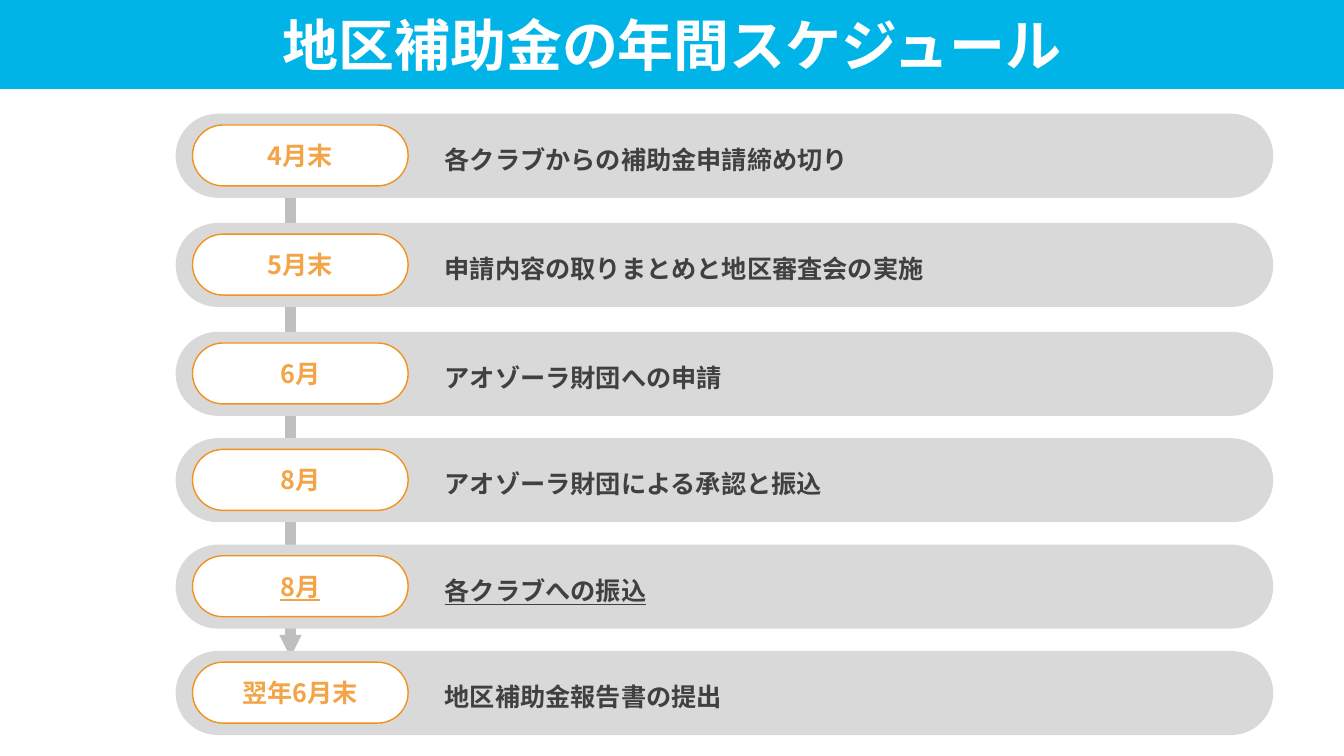
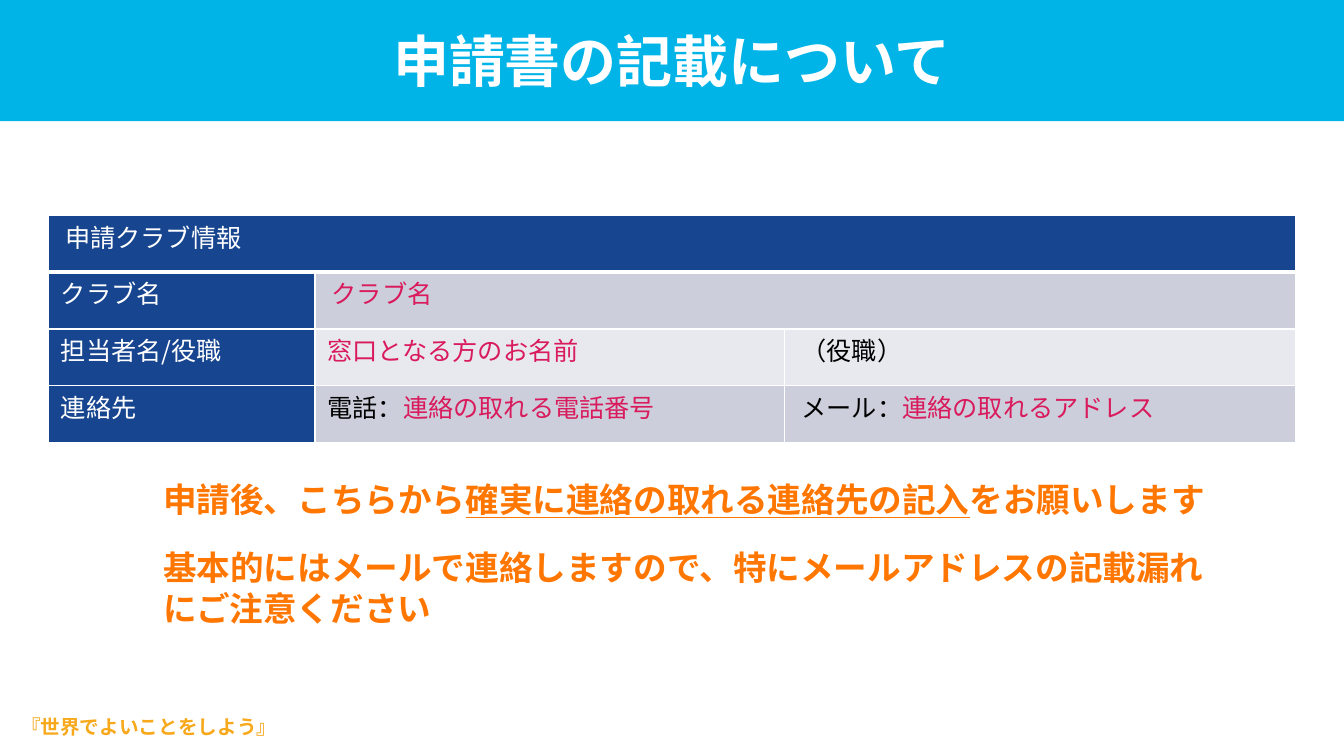
from dataclasses import dataclass

from lxml.etree import SubElement
from pptx import Presentation
from pptx.dml.color import RGBColor as RGB
from pptx.enum.shapes import MSO_CONNECTOR as LINE, MSO_SHAPE as SHAPE
from pptx.enum.text import MSO_ANCHOR as ANCHOR, MSO_AUTO_SIZE as FIT, PP_ALIGN as ALIGN
from pptx.oxml.ns import qn
from pptx.util import Pt


@dataclass(frozen=True)
class Theme:
    font: str = "Noto Sans CJK JP"
    white: RGB = RGB(0xFF, 0xFF, 0xFF)
    black: RGB = RGB(0, 0, 0)
    band: RGB = RGB(0x01, 0xB4, 0xE7)
    bar: RGB = RGB(0xD9, 0xD9, 0xD9)
    arrow: RGB = RGB(0xBF, 0xBF, 0xBF)
    pill_line: RGB = RGB(0xF1, 0x92, 0x1F)
    pill_text: RGB = RGB(0xF3, 0xA4, 0x47)
    body: RGB = RGB(0x40, 0x40, 0x40)
    notice: RGB = RGB(0xFF, 0x76, 0x00)
    motto: RGB = RGB(0xF7, 0xA8, 0x1B)
    navy: RGB = RGB(0x17, 0x45, 0x8F)
    hint: RGB = RGB(0xD9, 0x1A, 0x5C)
    row_dark: RGB = RGB(0xCC, 0xCF, 0xDB)
    row_light: RGB = RGB(0xE8, 0xE9, 0xEE)
    title_size: int = 40
    notice_size: int = 24
    body_size: int = 18
    motto_size: int = 14


theme = Theme()
deck = Presentation()
deck.slide_width, deck.slide_height = Pt(960), Pt(540)


def format_span(span, size, color, bold=True, underline=None):
    font = span.font
    font.size, font.bold, font.underline = Pt(size), bold, underline
    font.color.rgb = color
    font.name = theme.font
    SubElement(font._element, qn("a:ea"), typeface=theme.font)


def add_page(title, band_height):
    page = deck.slides.add_slide(deck.slide_layouts[5])
    band = page.shapes.title
    band.left, band.top, band.width, band.height = Pt(0), Pt(0), deck.slide_width, Pt(band_height)
    band.fill.solid()
    band.fill.fore_color.rgb = theme.band
    frame = band.text_frame
    frame.text = title
    frame.auto_size, frame.vertical_anchor = FIT.NONE, ANCHOR.MIDDLE
    frame.paragraphs[0].alignment = ALIGN.CENTER
    format_span(frame.paragraphs[0].runs[0], theme.title_size, theme.white)
    return page


# Slide 1: yearly schedule
page = add_page("地区補助金の年間スケジュール", 63.5)

# Arrow running behind the steps
arrow = page.shapes.add_connector(LINE.STRAIGHT, Pt(207.5), Pt(141), Pt(207.5), Pt(469.5))
arrow.line.color.rgb, arrow.line.width = theme.arrow, Pt(8)
SubElement(arrow.line._get_or_add_ln(), qn("a:tailEnd"), type="triangle", w="sm", len="sm")
SubElement(arrow._element.spPr, qn("a:effectLst"))

# Steps: top, date, task, underlined
steps = [
    (81.25, "4月末", "各クラブからの補助金申請締め切り", None),
    (159.25, "5月末", "申請内容の取りまとめと地区審査会の実施", None),
    (237, "6月", "アオゾーラ財団への申請", None),
    (313, "8月", "アオゾーラ財団による承認と振込", None),
    (389, "8月", "各クラブへの振込", True),
    (465, "翌年6月末", "地区補助金報告書の提出", None),
]
for top, date, task, underline in steps:
    bar = page.shapes.add_shape(SHAPE.ROUNDED_RECTANGLE, Pt(125.5), Pt(top), Pt(784), Pt(60))
    pill = page.shapes.add_shape(SHAPE.ROUNDED_RECTANGLE, Pt(137.5), Pt(top + 8), Pt(154), Pt(43.5))
    for shape, color in ((bar, theme.bar), (pill, theme.white)):
        shape.adjustments[0] = 0.5
        shape.shadow.inherit = False
        shape.fill.solid()
        shape.fill.fore_color.rgb = color
    bar.line.fill.background()
    pill.line.color.rgb, pill.line.width = theme.pill_line, Pt(1)
    pill.text_frame.text = date
    pill.text_frame.vertical_anchor = ANCHOR.MIDDLE
    para = pill.text_frame.paragraphs[0]
    para.alignment = ALIGN.CENTER
    format_span(para.runs[0], theme.body_size, theme.pill_text, underline=underline)

    box = page.shapes.add_textbox(Pt(310.5), Pt(top + 14), Pt(566), Pt(31.5))
    box.text_frame.text = task
    box.text_frame.word_wrap, box.text_frame.auto_size = True, FIT.SHAPE_TO_FIT_TEXT
    para = box.text_frame.paragraphs[0]
    para.line_spacing = 1.2
    format_span(para.runs[0], theme.body_size, theme.body, underline=underline)

# Slide 2: filling in the application
page = add_page("申請書の記載について", 86.5)

# Request to applicants: paragraphs of (text, underlined)
notices = [
    [("申請後、こちらから", None), ("確実に連絡の取れる連絡先の記入", True), ("をお願いします", None)],
    [("基本的にはメールで連絡しますので、特にメールアドレスの記載漏れにご注意ください", None)],
]
box = page.shapes.add_textbox(Pt(109.5), Pt(338.5), Pt(767), Pt(114.5))
frame = box.text_frame
frame.word_wrap, frame.auto_size = True, FIT.SHAPE_TO_FIT_TEXT
frame.add_paragraph()
for para, parts in zip(frame.paragraphs, notices):
    para.space_before = para.space_after = Pt(10)
    for text, underline in parts:
        span = para.add_run()
        span.text = text
        format_span(span, theme.notice_size, theme.notice, underline=underline)

# Club information: each cell holds (text, colour) parts
rows = [
    [[("申請クラブ情報", theme.white)], [], []],
    [[("クラブ名", theme.white)], [("クラブ名", theme.hint)], []],
    [[("担当者名/役職", theme.white)], [("窓口となる方のお名前", theme.hint)], [("（役職）", theme.black)]],
    [
        [("連絡先", theme.white)],
        [("電話：", theme.black), ("連絡の取れる電話番号", theme.hint)],
        [("メール：", theme.black), ("連絡の取れるアドレス", theme.hint)],
    ],
]
row_fills = [theme.navy, theme.row_dark, theme.row_light, theme.row_dark]
wide_inset_cells = {(0, 0), (1, 1), (2, 2), (3, 2)}
widths = [190.5, 335.5, 365]
row_height = 40.5
table = page.shapes.add_table(
    len(rows), len(widths), Pt(34.5), Pt(154), Pt(sum(widths)), Pt(row_height * len(rows))
).table
for column, width in zip(table.columns, widths):
    column.width = Pt(width)
for row_index, row in enumerate(rows):
    table.rows[row_index].height = Pt(row_height)
    for column_index, parts in enumerate(row):
        cell = table.cell(row_index, column_index)
        borders = {"lnL": 1, "lnR": 1, "lnT": 3 if row_index == 1 else 1, "lnB": 3 if row_index == 0 else 1}
        for side, weight in borders.items():
            border = SubElement(cell._tc.get_or_add_tcPr(), qn(f"a:{side}"), w=str(Pt(weight)))
            SubElement(SubElement(border, qn("a:solidFill")), qn("a:srgbClr"), val=str(theme.white))
        cell.fill.solid()
        cell.fill.fore_color.rgb = row_fills[row_index] if column_index else theme.navy
        cell.vertical_anchor = ANCHOR.MIDDLE
        side_inset, end_inset = (12, 6) if (row_index, column_index) in wide_inset_cells else (9, 0)
        cell.margin_left = cell.margin_right = Pt(side_inset)
        cell.margin_top = cell.margin_bottom = Pt(end_inset)
        para = cell.text_frame.paragraphs[0]
        para.alignment, para.line_spacing = ALIGN.JUSTIFY, Pt(15)
        for text, color in parts:
            span = para.add_run()
            span.text = text
            format_span(span, theme.body_size, color, bold=False)
table.cell(0, 0).merge(table.cell(0, 2))
table.cell(1, 1).merge(table.cell(1, 2))

# Motto at the foot
box = page.shapes.add_textbox(Pt(8), Pt(509), Pt(209), Pt(22.5))
box.text_frame.text = "『世界でよいことをしよう』"
box.text_frame.word_wrap = True
para = box.text_frame.paragraphs[0]
para.line_spacing, para.space_before = 0.9, Pt(10)
format_span(para.runs[0], theme.motto_size, theme.motto)

deck.save("out.pptx")
